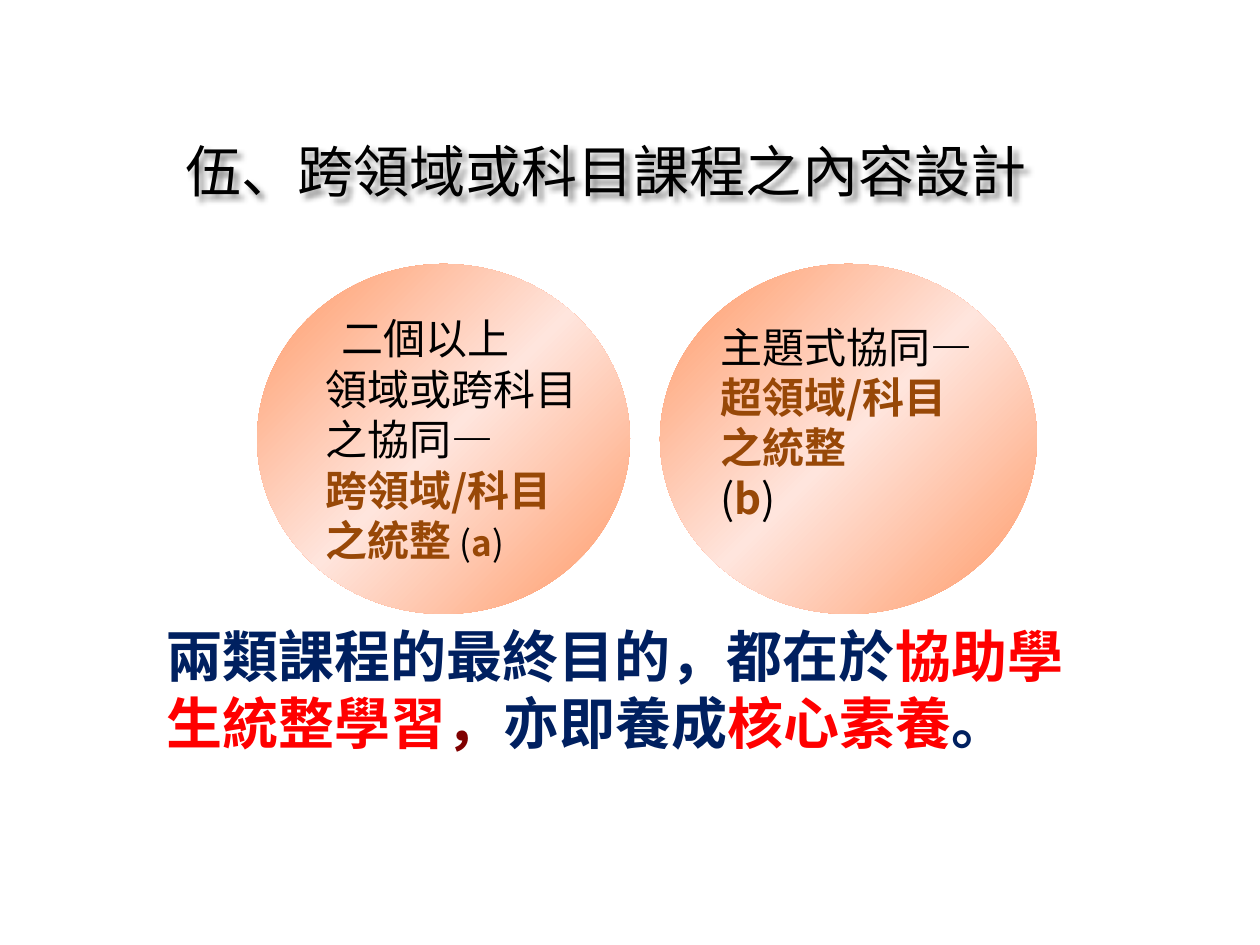
from pptx import Presentation
from pptx.dml.color import RGBColor
from pptx.enum.shapes import MSO_SHAPE as Shape
from pptx.enum.text import MSO_ANCHOR as Anchor, MSO_AUTO_SIZE as AutoSize, PP_ALIGN as Align
from pptx.oxml import parse_xml
from pptx.oxml.ns import nsdecls, qn
from pptx.util import Pt

PX_PER_INCH = 126
SC_FONT = "Noto Sans CJK SC"
JP_FONT = "Noto Sans CJK JP"
COLORS = {
    "black": "000000", "navy": "002060", "red": "FF0000", "maroon": "800000",
    "brown": "984807", "orange": "FF9966", "cream": "FFE5DD",
}


def px(length):
    return round(length * 914400 / PX_PER_INCH)


def place(shape, left, top, width, height):
    shape.left, shape.top = px(left), px(top)
    shape.width, shape.height = px(width), px(height)


def add_span(para, text, size=24, color="black", bold=False, font=SC_FONT):
    span = para.add_run()
    span.text = text
    span.font.size = Pt(size)
    span.font.bold = bold
    span.font.name = font
    span.font.color.rgb = RGBColor.from_string(COLORS[color])
    east_asian = span.font._element.makeelement(qn("a:ea"), {"typeface": font})
    span.font._element.find(qn("a:latin")).addnext(east_asian)


def set_indent(para, left):
    """Give a paragraph a flush left margin and no bullet."""
    properties = para._p.get_or_add_pPr()
    properties.set("marL", str(px(left)))
    properties.set("indent", "0")
    properties.append(parse_xml(f'<a:buNone {nsdecls("a")}/>'))


def fill_title(title):
    place(title, 35, 106, 1142, 129)
    frame = title.text_frame
    frame.auto_size = AutoSize.NONE
    frame.vertical_anchor = Anchor.MIDDLE
    para = frame.paragraphs[0]
    para.alignment = Align.CENTER
    for text, font in [("伍", SC_FONT), ("、跨領域或科目課程之", JP_FONT),
                       ("內", "Courier New"), ("容設計", JP_FONT)]:
        add_span(para, text, size=32, font=font)
    title._element.spPr.append(parse_xml(
        f'<a:effectLst {nsdecls("a")}><a:outerShdw blurRad="38100" dist="38100" dir="2700000">'
        f'<a:srgbClr val="{COLORS["black"]}"><a:alpha val="43000"/></a:srgbClr>'
        '</a:outerShdw></a:effectLst>'))


def fill_conclusion(body):
    place(body, 154, 615, 924, 151)
    frame = body.text_frame
    frame.auto_size = AutoSize.NONE
    frame.vertical_anchor = Anchor.TOP
    para = frame.paragraphs[0]
    set_indent(para, 0)
    para.space_before = Pt(0)
    for text, color in [("兩類課程的最終目的，都在於", "navy"), ("協助學生統整學習", "red"),
                        ("，", "maroon"), ("亦即養成", "navy"),
                        ("核心素養", "red"), ("。", "navy")]:
        add_span(para, text, size=32, color=color, bold=True)


def add_gradient(shape):
    stops = "".join(
        f'<a:gs pos="{position}"><a:srgbClr val="{COLORS[color]}"/></a:gs>'
        for position, color in [(0, "orange"), (50000, "cream"), (100000, "orange")])
    shape._element.spPr.find(qn("a:prstGeom")).addnext(parse_xml(
        f'<a:gradFill {nsdecls("a")} rotWithShape="1"><a:gsLst>{stops}</a:gsLst>'
        '<a:lin ang="2700000" scaled="1"/></a:gradFill>'))


def add_circle(slide, left, width, lines, indents, bottom_inset=5):
    """Draw a gradient ellipse; each line is a list of (text, format) spans."""
    circle = slide.shapes.add_shape(Shape.OVAL, px(left), px(264), px(width), px(350))
    circle.shadow.inherit = False
    circle.line.fill.background()
    add_gradient(circle)
    frame = circle.text_frame
    frame.word_wrap = False
    frame.vertical_anchor = Anchor.MIDDLE
    frame.margin_left = frame.margin_right = frame.margin_top = px(5)
    frame.margin_bottom = px(bottom_inset)
    for index, (line, indent) in enumerate(zip(lines, indents)):
        para = frame.add_paragraph() if index else frame.paragraphs[0]
        set_indent(para, indent)
        para.alignment = Align.LEFT
        for text, style in line:
            add_span(para, text, **style)


def main():
    deck = Presentation()
    deck.slide_width, deck.slide_height = px(1260), px(945)
    slide = deck.slides.add_slide(deck.slide_layouts[1])
    fill_title(slide.shapes.title)
    fill_conclusion(slide.placeholders[1])

    plain, bold = {}, {"bold": True}
    accent = {"color": "brown", "bold": True}
    small, small_accent = {"size": 20}, {"size": 20, **accent}
    add_circle(slide, 257, 373, [
        [("二個以上", plain)],
        [("領域或跨科目", plain)],
        [("之協同", plain), ("—", bold)],
        [("跨領域/科目", accent)],
        [("之統整", accent), (" (", small), ("a", small_accent), (")", small)],
    ], indents=[25, 9, 9, 9, 9])
    add_circle(slide, 660, 377, [
        [("主題式協同", plain), ("—", bold)],
        [("超領域/科目", accent)],
        [("之統整", accent)],
        [("(", plain), ("b", accent), (")", plain)],
    ], indents=[0] * 4, bottom_inset=39)
    deck.save("out.pptx")


if __name__ == "__main__":
    main()
